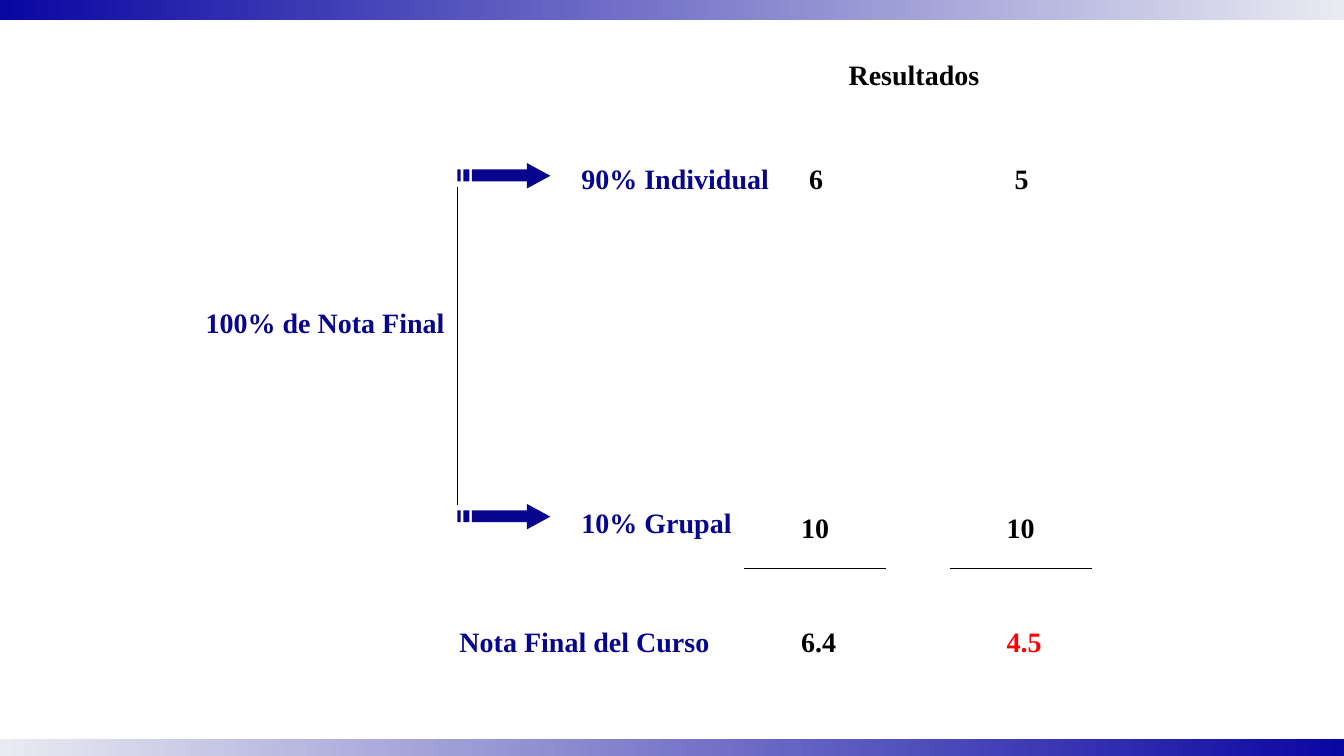
from dataclasses import dataclass

from lxml import etree
from pptx import Presentation
from pptx.dml.color import RGBColor
from pptx.enum.shapes import MSO_CONNECTOR, MSO_SHAPE
from pptx.enum.text import MSO_ANCHOR, MSO_AUTO_SIZE, PP_ALIGN
from pptx.oxml.ns import qn
from pptx.shapes.autoshape import Shape
from pptx.util import Cm, Pt

RECT = MSO_SHAPE.RECTANGLE
STRAIGHT = MSO_CONNECTOR.STRAIGHT
TOP = MSO_ANCHOR.TOP
LEFT = PP_ALIGN.LEFT
GROW = MSO_AUTO_SIZE.SHAPE_TO_FIT_TEXT

NAVY = RGBColor(0x07, 0x05, 0x8E)
DEEP = RGBColor(0x09, 0x07, 0xA2)
PALE = RGBColor(0xEA, 0xEA, 0xF2)
BLACK = RGBColor(0, 0, 0)
RED = RGBColor(255, 0, 0)

FONT = "Times New Roman"
WIDE, HIGH = 33.87, 19.05
BAR = 0.51
ROW = 1.09
STEM = 11.53
STEP = 5.18


@dataclass
class Label:
    text: str
    x: float
    y: float
    width: float
    color: RGBColor


@dataclass
class Rule:
    x1: float
    y1: float
    x2: float
    y2: float


@dataclass
class Band:
    y: float
    start: RGBColor
    end: RGBColor


@dataclass
class Result:
    solo: str
    group: str
    final: str
    color: RGBColor


BANDS = [Band(0, DEEP, PALE), Band(18.62, PALE, DEEP)]
HEAD = Label("Resultados", 21.13, 1.32, 4.39, BLACK)
LABELS = [
    Label("100% de Nota Final", 4.93, 7.57, 6.93, NAVY),
    Label("90% Individual", 14.4, 3.94, 6.93, NAVY),
    Label("10% Grupal", 14.4, 12.62, 6.93, NAVY),
    Label("Nota Final del Curso", 11.33, 15.62, 6.93, NAVY),
]
RESULTS = [Result("6", "10", "6.4", BLACK), Result("5", "10", "4.5", RED)]
ARROWS = [4.11, 12.7]
HEAD_PATH = [(1.75, 0), (1.75, 0.16), (0.36, 0.16), (0.36, 0.46),
             (1.75, 0.46), (1.75, 0.64), (2.34, 0.32)]
STRIPES = [(0.15, 0.3), (0, 0.08)]


def write(box: Shape, label: Label) -> None:
    box.left, box.top = Cm(label.x), Cm(label.y)
    box.width, box.height = Cm(label.width), Cm(ROW)
    frame = box.text_frame
    frame.word_wrap = True
    frame.auto_size = GROW
    frame.vertical_anchor = TOP
    para = frame.paragraphs[0]
    para.alignment = LEFT
    run = para.add_run()
    run.text = label.text
    font = run.font
    font.name, font.size, font.bold = FONT, Pt(20), True
    font.color.rgb = label.color


def add_label(shapes, label: Label) -> None:
    write(shapes.add_textbox(0, 0, Cm(1), Cm(1)), label)


def add_band(shapes, band: Band) -> None:
    bar = shapes.add_shape(RECT, 0, Cm(band.y), Cm(WIDE), Cm(BAR))
    bar.shadow.inherit = False
    bar.line.fill.background()
    bar.fill.gradient()
    bar.fill.gradient_angle = 0
    for stop, color in zip(bar.fill.gradient_stops, (band.start, band.end)):
        stop.color.rgb = color


def add_rule(shapes, rule: Rule) -> None:
    line = shapes.add_connector(
        STRAIGHT, Cm(rule.x1), Cm(rule.y1), Cm(rule.x2), Cm(rule.y2))
    line.line.color.rgb = BLACK
    line.line.width = Pt(0.75)
    etree.SubElement(line._element.spPr, qn("a:effectLst"))


def add_arrow(shapes, y: float) -> None:
    paths = [HEAD_PATH] + [
        [(a, 0.16), (a, 0.46), (b, 0.46), (b, 0.16)] for a, b in STRIPES]
    outlines = [[(Cm(STEM + px), Cm(y + py)) for px, py in path]
                for path in paths]
    form = shapes.build_freeform(*outlines[0][0])
    form.add_line_segments(outlines[0][1:])
    for points in outlines[1:]:
        form.move_to(*points[0])
        form.add_line_segments(points[1:])
    arrow = form.convert_to_shape()
    arrow.shadow.inherit = False
    arrow.fill.solid()
    arrow.fill.fore_color.rgb = NAVY
    arrow.line.fill.background()


def add_result(shapes, result: Result, shift: float) -> None:
    add_label(shapes, Label(result.solo, 20.14 + shift, 3.94, 1.09, BLACK))
    add_label(shapes, Label(result.group, 19.94 + shift, 12.73, 1.6, BLACK))
    add_rule(shapes, Rule(18.75 + shift, 14.33, 22.33 + shift, 14.33))
    add_label(
        shapes, Label(result.final, 19.94 + shift, 15.62, 1.6, result.color))


def main() -> None:
    deck = Presentation()
    deck.slide_width, deck.slide_height = Cm(WIDE), Cm(HIGH)
    slide = deck.slides.add_slide(deck.slide_layouts[5])
    shapes = slide.shapes
    for band in BANDS:
        add_band(shapes, band)
    write(shapes.title, HEAD)
    for label in LABELS:
        add_label(shapes, label)
    for y in ARROWS:
        add_arrow(shapes, y)
    add_rule(shapes, Rule(STEM, 4.72, STEM, 12.73))
    for col, result in enumerate(RESULTS):
        add_result(shapes, result, col * STEP)
    deck.save("out.pptx")


if __name__ == "__main__":
    main()
